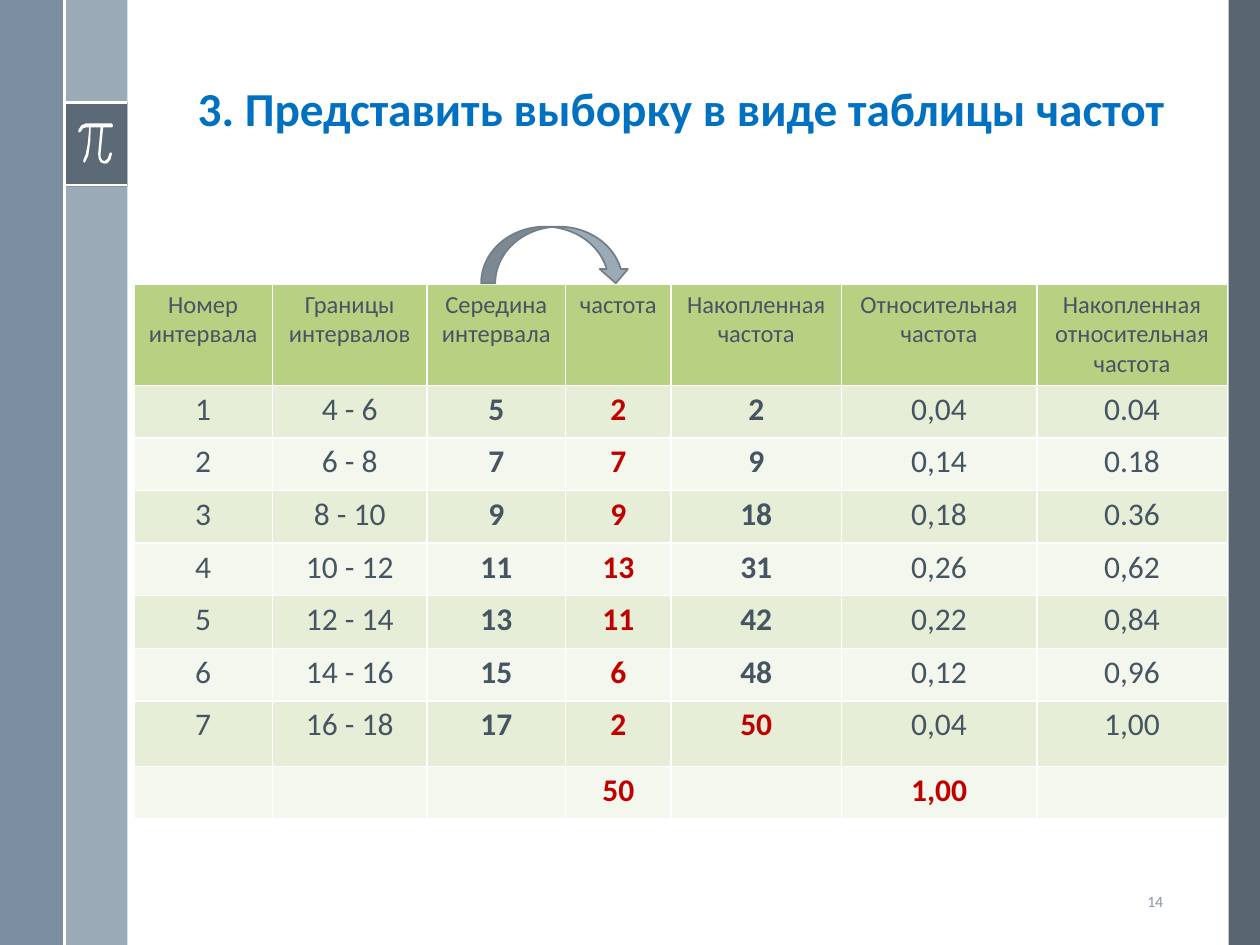
from lxml.etree import SubElement
from pptx import Presentation
from pptx.dml.color import RGBColor
from pptx.enum.shapes import MSO_CONNECTOR, MSO_SHAPE
from pptx.enum.text import MSO_ANCHOR, PP_ALIGN
from pptx.oxml import parse_xml
from pptx.oxml.ns import nsdecls, qn
from pptx.util import Cm, Pt

COLORS = {
    "title": "0070C0", "text": "465562", "accent": "C00000", "number": "879AAA",
    "header": "B8D082", "odd": "E6EED8", "even": "F3F7ED", "white": "FFFFFF",
    "dark": "475562", "light": "9BAAB7", "side": "6A8093", "outline": "737E87",
}
FONT = "Calibri"
TITLE = "3. Представить выборку в виде таблицы частот"
HEADERS = [
    "Номер интервала", "Границы интервалов", "Середина интервала", "частота",
    "Накопленная частота", "Относительная частота", "Накопленная относительная частота",
]
ROWS = [
    ["1", "4 - 6", "5", "2", "2", "0,04", "0.04"],
    ["2", "6 - 8", "7", "7", "9", "0,14", "0.18"],
    ["3", "8 - 10", "9", "9", "18", "0,18", "0.36"],
    ["4", "10 - 12", "11", "13", "31", "0,26", "0,62"],
    ["5", "12 - 14", "13", "11", "42", "0,22", "0,84"],
    ["6", "14 - 16", "15", "6", "48", "0,12", "0,96"],
    ["7", "16 - 18", "17", "2", "50", "0,04", "1,00"],
    ["", "", "", "50", "", "1,00", ""],
]
BOLD_COLUMNS = {2, 3, 4}
FREQUENCY_COLUMN = 3
TOTAL_CELLS = {(7, 4), (8, 5)}
COLUMN_WIDTHS = [2.79, 3.12, 2.79, 2.13, 3.43, 3.94, 3.84]
ROW_HEIGHTS = [2.03] + [1.06] * 6 + [1.32, 1.06]

PANELS = [
    (24.77, 0, 0.63, 19.05, "dark", 90),
    (1.3, 0, 1.27, 19.05, "light", 100),
    (0, 0, 1.27, 19.05, "side", 88),
    (1.3, 2.06, 1.27, 1.7, "dark", 75),
]
RULES = [(1.3, 2.06, 2.57, 2.06), (1.3, 3.73, 2.57, 3.73), (1.3, 0, 1.3, 19.05)]
PI_OUTLINE = [
    (2.26, 2.49), (1.73, 2.49), (1.64, 2.53), (1.58, 2.62), (1.58, 2.66), (1.61, 2.67),
    (1.64, 2.64), (1.67, 2.59), (1.73, 2.57), (1.8, 2.57), (1.77, 2.9), (1.73, 3.11),
    (1.68, 3.23), (1.68, 3.27), (1.71, 3.28), (1.78, 3.14), (1.82, 2.86), (1.83, 2.57),
    (2.03, 2.57), (1.98, 3.1), (1.99, 3.2), (2.03, 3.27), (2.1, 3.3), (2.17, 3.29),
    (2.23, 3.21), (2.26, 3.1), (2.24, 3.07), (2.21, 3.09), (2.17, 3.2), (2.11, 3.25),
    (2.06, 3.23), (2.03, 3.17), (2.03, 3.1), (2.08, 2.57), (2.26, 2.57), (2.28, 2.54),
]


def rgb(name):
    return RGBColor.from_string(COLORS[name])


def paint(shape, color, opacity=100):
    shape.shadow.inherit = False
    shape.fill.solid()
    shape.fill.fore_color.rgb = rgb(color)
    shape.line.fill.background()
    if opacity < 100:
        color_element = shape.fill._xPr.find(qn("a:solidFill"))[0]
        SubElement(color_element, qn("a:alpha"), val=str(opacity * 1000))


def format_text(paragraph, size, color, alignment, bold=False):
    paragraph.alignment = alignment
    font = paragraph.font
    font.name, font.size, font.bold = FONT, Pt(size), bold
    font.color.rgb = rgb(color)


def add_background(slide):
    for left, top, width, height, color, opacity in PANELS:
        panel = slide.shapes.add_shape(MSO_SHAPE.RECTANGLE, Cm(left), Cm(top), Cm(width), Cm(height))
        paint(panel, color, opacity)
    for ends in RULES:
        rule = slide.shapes.add_connector(MSO_CONNECTOR.STRAIGHT, *map(Cm, ends))
        rule.line.color.rgb = rgb("white")
        rule.line.width = Pt(1.5)
        SubElement(rule._element.spPr, qn("a:effectLst"))
    points = [(Cm(x), Cm(y)) for x, y in PI_OUTLINE]
    builder = slide.shapes.build_freeform(*points[0])
    builder.add_line_segments(points[1:], close=True)
    paint(builder.convert_to_shape(), "white")


def add_title(slide):
    title = slide.shapes.title
    title.left, title.top, title.width, title.height = Cm(3.33), Cm(0.48), Cm(20.4), Cm(3.45)
    frame = title.text_frame
    frame.text = TITLE
    frame.word_wrap = True
    frame.vertical_anchor = MSO_ANCHOR.BOTTOM
    frame.margin_bottom = Cm(1.17)
    frame.paragraphs[0].line_spacing = 0.9
    format_text(frame.paragraphs[0], 27, "title", PP_ALIGN.RIGHT, True)


def format_cell(cell, text, row, column):
    properties = cell._tc.get_or_add_tcPr()
    for side in "LRTB":
        properties.append(parse_xml(
            f'<a:ln{side} {nsdecls("a")} w="12700"><a:solidFill>'
            f'<a:srgbClr val="{COLORS["white"]}"/></a:solidFill></a:ln{side}>'))
    cell.fill.solid()
    cell.fill.fore_color.rgb = rgb("header" if row == 0 else "odd" if row % 2 else "even")
    cell.margin_left = cell.margin_right = Cm(0.2)
    cell.margin_top = cell.margin_bottom = Cm(0.1)
    cell.text = text
    total = (row, column) in TOTAL_CELLS
    accent = total or (row > 0 and column == FREQUENCY_COLUMN)
    bold = total or (row > 0 and column in BOLD_COLUMNS)
    format_text(cell.text_frame.paragraphs[0], 18 if row else 14,
                "accent" if accent else "text", PP_ALIGN.CENTER, bold)


def add_frequency_table(slide):
    table = slide.shapes.add_table(
        len(ROW_HEIGHTS), len(COLUMN_WIDTHS), Cm(2.7), Cm(5.74),
        Cm(sum(COLUMN_WIDTHS)), Cm(sum(ROW_HEIGHTS))).table
    for column, width in zip(table.columns, COLUMN_WIDTHS):
        column.width = Cm(width)
    for row, height in zip(table.rows, ROW_HEIGHTS):
        row.height = Cm(height)
    for row, values in enumerate([HEADERS] + ROWS):
        for column, text in enumerate(values):
            format_cell(table.cell(row, column), text, row, column)


def add_slide_number(slide):
    frame = slide.shapes.add_textbox(Cm(22.43), Cm(17.65), Cm(1.27), Cm(1.02)).text_frame
    frame.word_wrap = True
    frame.vertical_anchor = MSO_ANCHOR.MIDDLE
    frame.text = "14"
    format_text(frame.paragraphs[0], 9, "number", PP_ALIGN.RIGHT)


def add_arrow(slide):
    arrow = slide.shapes.add_shape(
        MSO_SHAPE.CURVED_DOWN_ARROW, Cm(9.7), Cm(4.57), Cm(3), Cm(1.14))
    paint(arrow, "light")
    arrow.line.color.rgb = rgb("outline")
    arrow.line.width = Pt(1)


def main():
    presentation = Presentation()
    presentation.slide_width, presentation.slide_height = Cm(25.4), Cm(19.05)
    slide = presentation.slides.add_slide(presentation.slide_layouts[5])
    add_background(slide)
    add_title(slide)
    add_frequency_table(slide)
    add_slide_number(slide)
    add_arrow(slide)
    presentation.save("out.pptx")


if __name__ == "__main__":
    main()
